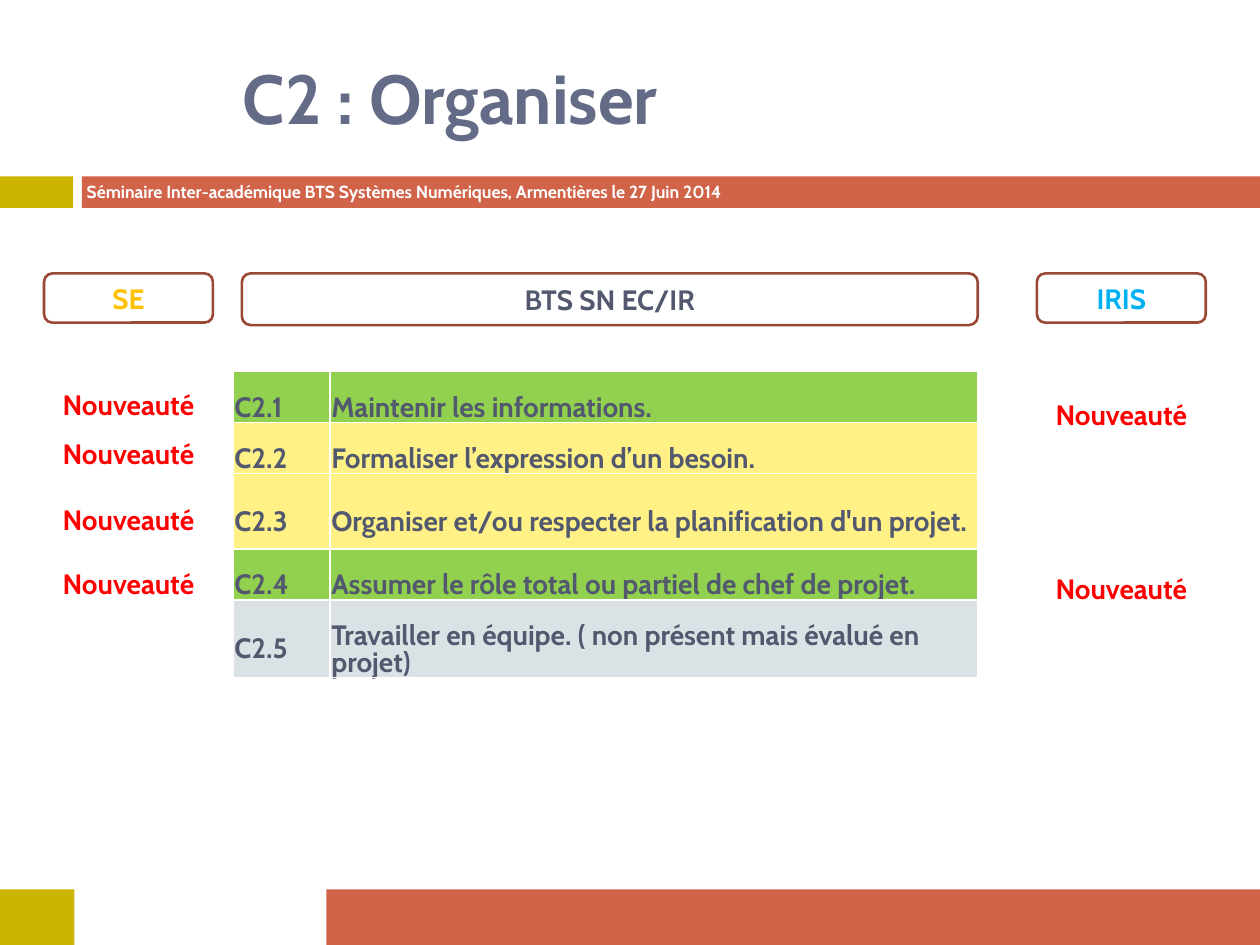
import pptx
import pptx.util
from pptx.dml.color import RGBColor
from pptx.enum.shapes import MSO_SHAPE
from pptx.enum.text import MSO_ANCHOR, PP_ALIGN
from pptx.util import Inches

WHITE = RGBColor(0xFF, 0xFF, 0xFF)
OLIVE = RGBColor(0xCC, 0xB4, 0x00)
BRICK = RGBColor(0xD1, 0x63, 0x49)
DARK_BRICK = RGBColor(0x9A, 0x49, 0x36)
TITLE_BLUE = RGBColor(0x64, 0x6B, 0x86)
SLATE = RGBColor(0x52, 0x58, 0x6E)
AMBER = RGBColor(0xFF, 0xC0, 0x00)
SKY = RGBColor(0x00, 0xB0, 0xF0)
RED = RGBColor(0xFF, 0x00, 0x00)
GREEN = RGBColor(0x92, 0xD0, 0x50)
YELLOW = RGBColor(0xFF, 0xF1, 0x85)
GREY = RGBColor(0xDB, 0xE2, 0xE6)


class SlideBuilder:
    font_name = "Cabin"
    body_size = 16

    def __init__(self, page):
        self.page = page

    def style_text(self, frame, text, color, size=body_size, align=PP_ALIGN.LEFT):
        frame.text = text
        para = frame.paragraphs[0]
        para.alignment = align
        for span in para.runs:
            span.font.name = self.font_name
            span.font.size = pptx.util.Pt(size)
            span.font.bold = True
            span.font.color.rgb = color
        return para

    def shape(self, kind, left, top, width, height, fill):
        shape = self.page.shapes.add_shape(
            kind, Inches(left), Inches(top), Inches(width), Inches(height))
        shape.shadow.inherit = False
        shape.fill.solid()
        shape.fill.fore_color.rgb = fill
        return shape

    def band(self, left, top, width, height, fill):
        self.shape(MSO_SHAPE.RECTANGLE, left, top, width, height, fill).line.fill.background()

    def text_box(self, left, top, width, height, text, color, size):
        box = self.page.shapes.add_textbox(
            Inches(left), Inches(top), Inches(width), Inches(height))
        box.text_frame.word_wrap = True
        self.style_text(box.text_frame, text, color, size)
        return box.text_frame

    def label(self, left, top, width, height, text, color, outline):
        label = self.shape(MSO_SHAPE.ROUNDED_RECTANGLE, left, top, width, height, WHITE)
        label.line.color.rgb = outline
        label.line.width = pptx.util.Pt(1.5)
        label.text_frame.vertical_anchor = MSO_ANCHOR.MIDDLE
        self.style_text(label.text_frame, text, color, align=PP_ALIGN.CENTER)

    def table(self, left, top, widths, heights, rows):
        table = self.page.shapes.add_table(
            len(rows), len(widths), Inches(left), Inches(top),
            Inches(sum(widths)), Inches(sum(heights))).table
        table.first_row = False
        table.horz_banding = False
        for column, width in zip(table.columns, widths):
            column.width = Inches(width)
        for row, height, (*texts, fill) in zip(table.rows, heights, rows):
            row.height = Inches(height)
            for cell, text in zip(row.cells, texts):
                cell.fill.solid()
                cell.fill.fore_color.rgb = fill
                cell.vertical_anchor = MSO_ANCHOR.MIDDLE
                cell.margin_left = cell.margin_right = Inches(0.01)
                cell.margin_top = Inches(0.19)
                cell.margin_bottom = 0
                self.style_text(cell.text_frame, text, SLATE).line_spacing = 0.8


def main():
    deck = pptx.Presentation()
    deck.slide_width = Inches(10)
    deck.slide_height = Inches(7.5)
    builder = SlideBuilder(deck.slides.add_slide(deck.slide_layouts[6]))

    # Header and footer bands
    builder.band(0, 1.4, 0.58, 0.25, OLIVE)
    builder.band(0.65, 1.4, 9.35, 0.25, BRICK)
    builder.band(0, 7.06, 0.59, 0.44, OLIVE)
    builder.band(2.59, 7.06, 7.41, 0.44, BRICK)
    builder.text_box(
        0.59, 1.39, 6.06, 0.44,
        "Séminaire Inter-académique BTS Systèmes Numériques, Armentières le 27 Juin 2014",
        WHITE, 10)

    # Title, raised above the middle of its box
    title = builder.text_box(1.83, 0.54, 8.92, 1.08, "C2 : Organiser", TITLE_BLUE, 39.6)
    title.vertical_anchor = MSO_ANCHOR.MIDDLE
    title.margin_bottom = Inches(0.67)

    # Column headings
    side_width, se_left, iris_left = 1.34, 0.35, 8.23
    builder.label(se_left, 2.17, side_width, 0.39, "SE", AMBER, DARK_BRICK)
    builder.label(iris_left, 2.17, side_width, 0.39, "IRIS", SKY, DARK_BRICK)
    builder.label(1.92, 2.17, 5.84, 0.41, "BTS SN EC/IR", SLATE, DARK_BRICK)

    # Skills table
    builder.table(1.85, 2.95, [0.77, 5.14], [0.4, 0.4, 0.6, 0.4, 0.4], [
        ("C2.1", "Maintenir les informations.", GREEN),
        ("C2.2", "Formaliser l’expression d’un besoin.", YELLOW),
        ("C2.3", "Organiser et/ou respecter la planification d'un projet.", YELLOW),
        ("C2.4", "Assumer le rôle total ou partiel de chef de projet.", GREEN),
        ("C2.5", "Travailler en équipe. ( non présent mais évalué en projet)", GREY),
    ])

    # Markers for what is new in each former diploma
    for left, tops in ((se_left, (3.07, 3.46, 3.98, 4.49)), (iris_left, (3.15, 4.53))):
        for top in tops:
            builder.label(left, top, side_width, 0.28, "Nouveauté", RED, WHITE)

    deck.save("out.pptx")


if __name__ == "__main__":
    main()
